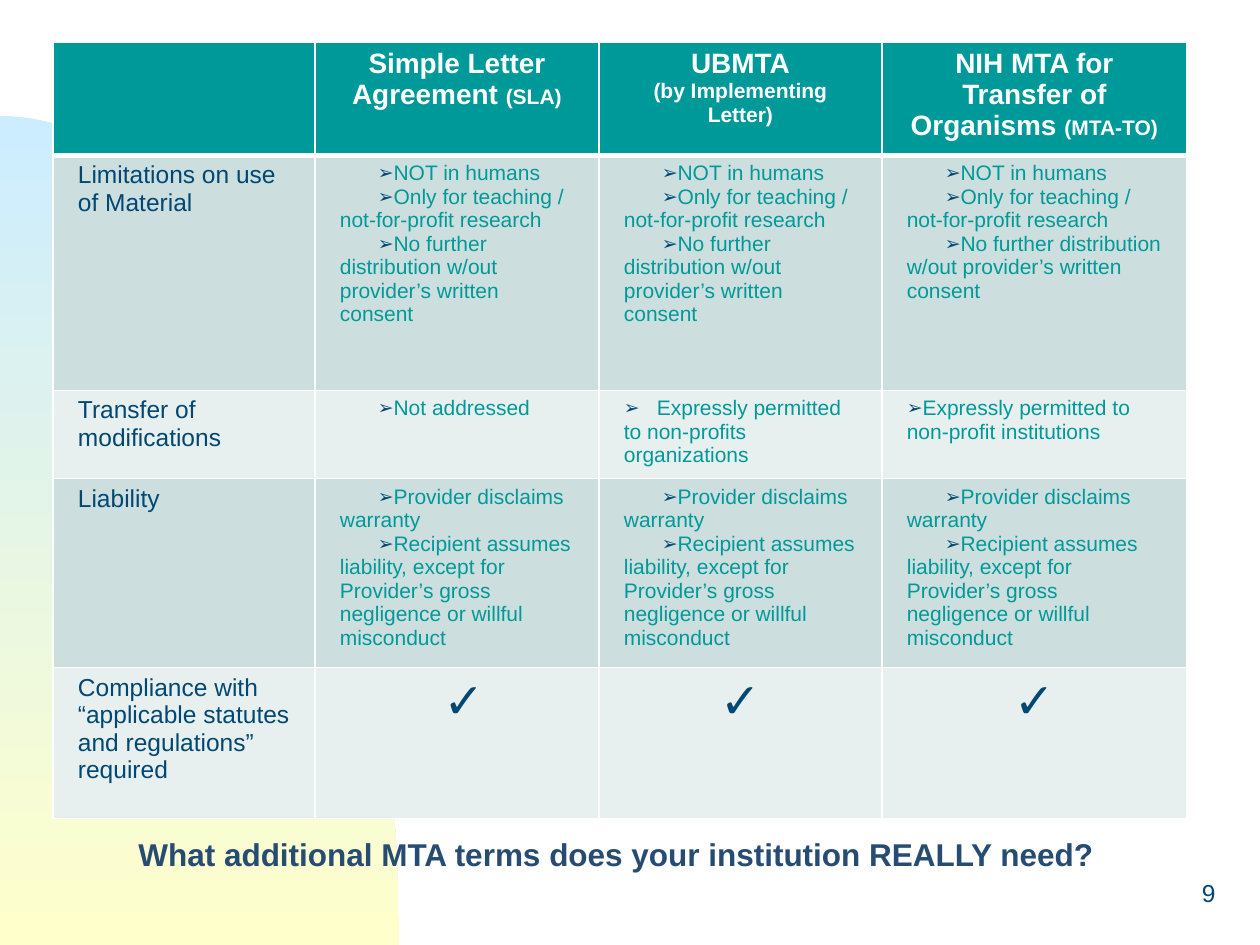
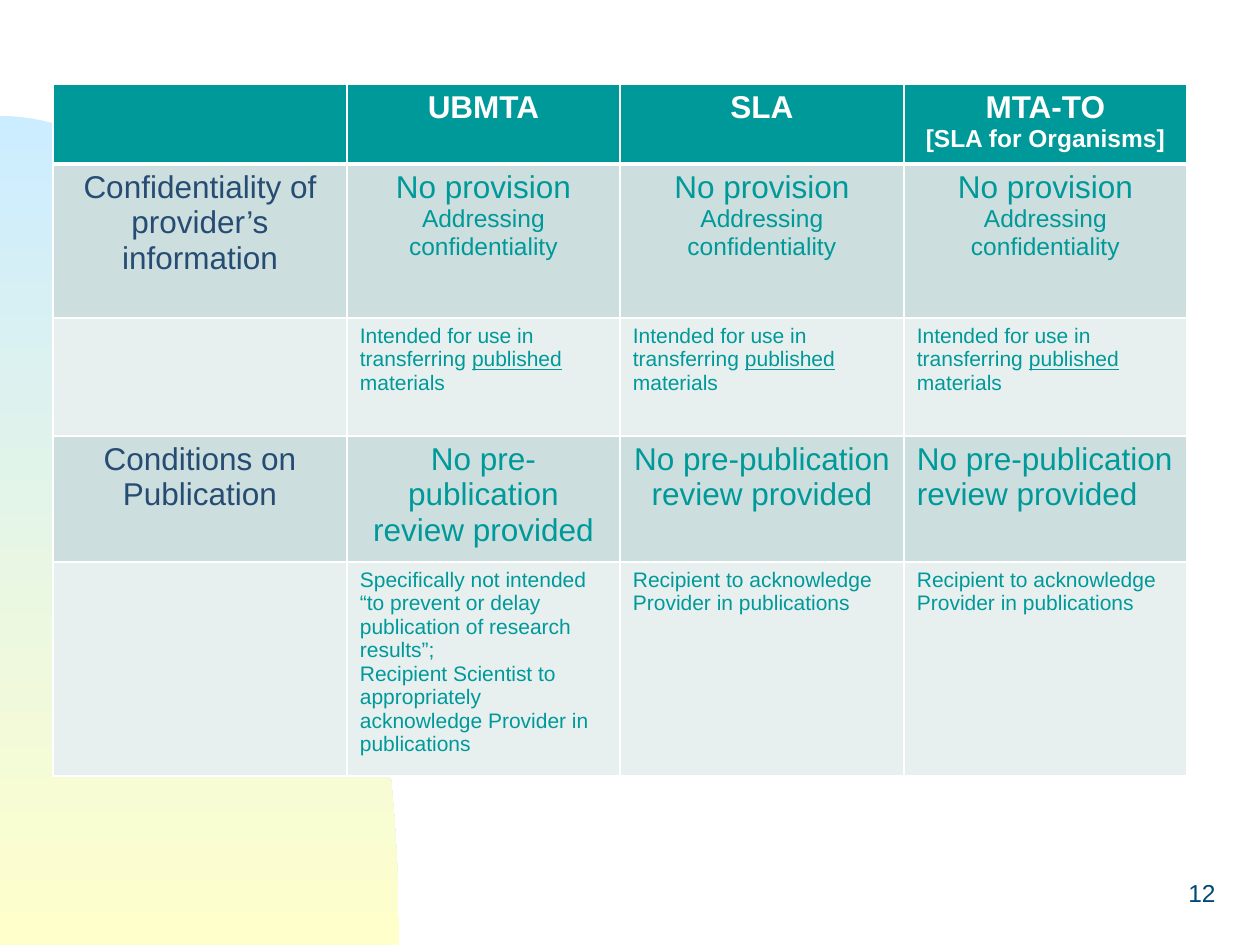
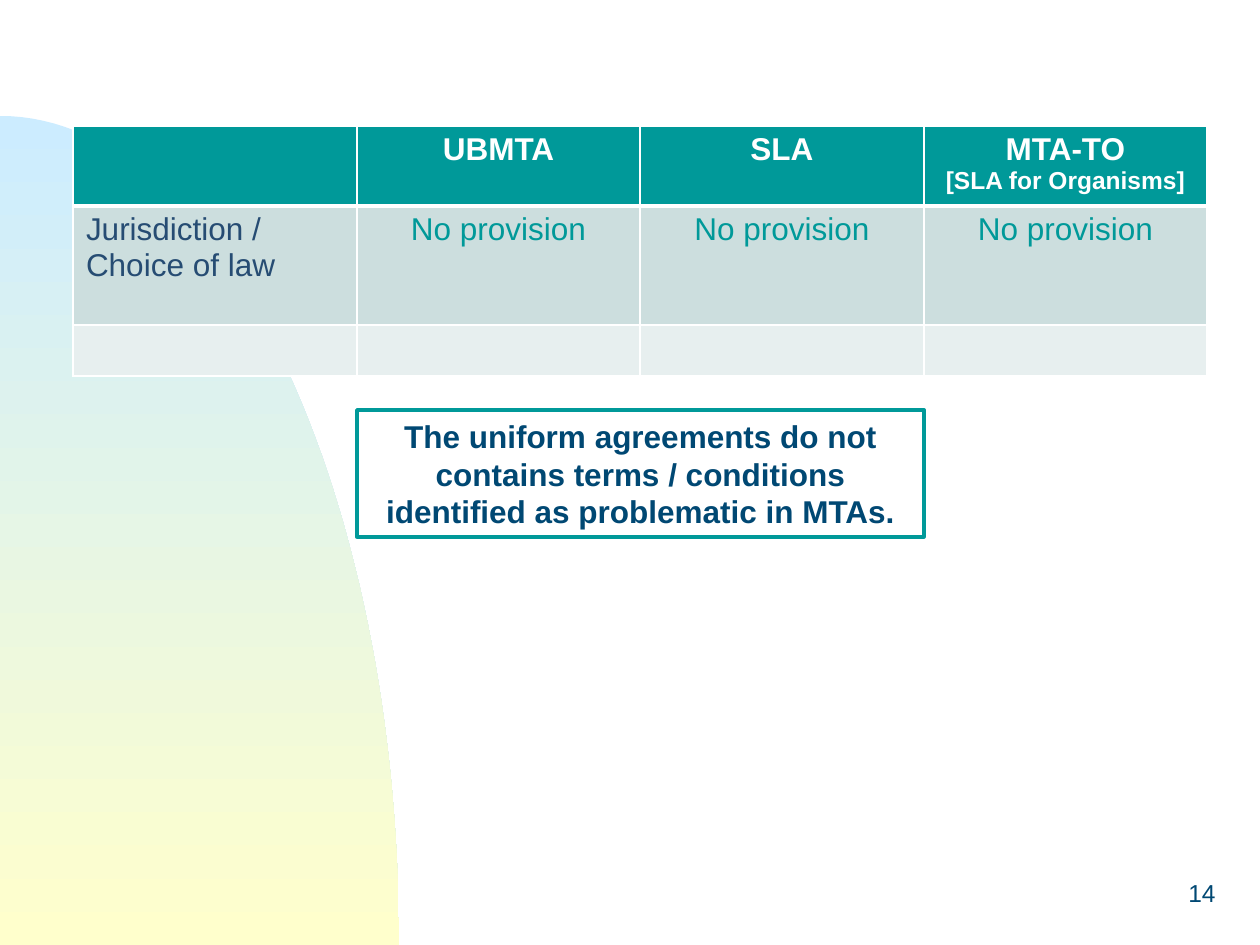
import dataclasses

import lxml.etree
import pptx
import pptx.dml.color
import pptx.enum.shapes
import pptx.enum.text
import pptx.oxml.ns
import pptx.util

PX = 914400 / 126
FONT = "Arial"
TEAL, NAVY, SLATE, WHITE = "009999", "004873", "264C73", "FFFFFF"
BAND_DARK, BAND_LIGHT = "CCDEDE", "E7EFEF"
SKY, CREAM = "CCECFF", "FFFFCC"
ALIGN = pptx.enum.text.PP_ALIGN
BULLET_INDENT = 38


def px(length):
    return pptx.util.Emu(round(length * PX))


def rgb(color):
    return pptx.dml.color.RGBColor.from_string(color)


def add_xml(parent, tag, **attributes):
    return lxml.etree.SubElement(parent, pptx.oxml.ns.qn(tag), attributes)


@dataclasses.dataclass
class Run:
    text: str
    size: int = 12
    color: str = TEAL
    bold: bool = False
    underline: bool = False


@dataclasses.dataclass
class Para:
    """A paragraph; an indent, even zero, gives it an arrow bullet."""
    runs: list
    align: object = ALIGN.LEFT
    indent: int | None = None
    tab: int | None = None


def line(text, size=12, color=TEAL, align=ALIGN.LEFT, bold=False):
    return Para([Run(text, size, color, bold)], align)


def centred(text, size=18, color=TEAL, bold=False):
    return line(text, size, color, ALIGN.CENTER, bold)


def heading(text, size=18):
    return centred(text, size, WHITE, True)


def bullets(*texts, indent=BULLET_INDENT):
    return [Para([Run(text)], indent=indent) for text in texts]


class Deck:
    def __init__(self):
        self.prs = pptx.Presentation()
        self.prs.slide_width, self.prs.slide_height = px(1260), px(945)
        self.layout = self.prs.slide_layouts[6]
        self.slide = None

    def new_slide(self, number):
        self.slide = self.prs.slides.add_slide(self.layout)
        if len(self.prs.slides) == 1:
            self.add_shared_curve()
        self.text_box(966, 861, 262, 63, line(str(number), 14, NAVY, ALIGN.RIGHT),
                      pptx.enum.text.MSO_ANCHOR.MIDDLE)

    def add_shared_curve(self):
        """Draw the gradient curve once and hand it to the layout."""
        top, right, bottom, steps = 116, 399, 945, 60
        points = []
        for step in range(1, steps + 1):
            t = step / steps
            u = 1 - t
            x = 3 * u * u * t * 220 + 3 * u * t * t * right + t ** 3 * right
            y = (u ** 3 + 3 * u * u * t) * top + 3 * u * t * t * 488 + t ** 3 * bottom
            points.append((round(x * PX), round(y * PX)))
        builder = self.slide.shapes.build_freeform(0, px(top))
        builder.add_line_segments(points + [(0, px(bottom))], close=True)
        curve = builder.convert_to_shape()
        curve.shadow.inherit = False
        curve.line.fill.background()
        curve.fill.gradient()
        curve.fill.gradient_angle = 270
        for stop, color, position in zip(curve.fill.gradient_stops, (SKY, CREAM), (0, 1)):
            stop.color.rgb = rgb(color)
            stop.position = position
        self.layout.shapes.element.insert(2, curve.element)

    def fill_text(self, frame, paras):
        frame.word_wrap = True
        for index, para in enumerate(paras):
            paragraph = frame.add_paragraph() if index else frame.paragraphs[0]
            paragraph.alignment = para.align
            if para.indent is not None:
                self.add_bullet(paragraph, para)
            for item in para.runs:
                run = paragraph.add_run()
                run.text = item.text
                run.font.name = FONT
                run.font.size = pptx.util.Pt(item.size)
                run.font.bold = item.bold
                run.font.underline = item.underline
                run.font.color.rgb = rgb(item.color)

    def add_bullet(self, paragraph, para):
        props = paragraph._p.get_or_add_pPr()
        props.set("marL", "0")
        props.set("indent", str(px(para.indent)))
        add_xml(add_xml(props, "a:buClr"), "a:srgbClr", val=NAVY)
        add_xml(props, "a:buSzPct", val="90000")
        add_xml(props, "a:buFont", typeface=FONT)
        add_xml(props, "a:buChar", char="➢")
        if para.tab:
            add_xml(add_xml(props, "a:tabLst"), "a:tab", pos=str(px(para.tab)), algn="l")

    def text_box(self, x, y, w, h, para, anchor=pptx.enum.text.MSO_ANCHOR.TOP):
        box = self.slide.shapes.add_textbox(px(x), px(y), px(w), px(h))
        box.text_frame.vertical_anchor = anchor
        self.fill_text(box.text_frame, [para])

    def callout(self, x, y, w, h, para):
        box = self.slide.shapes.add_shape(
            pptx.enum.shapes.MSO_SHAPE.RECTANGLE, px(x), px(y), px(w), px(h))
        box.shadow.inherit = False
        box.fill.solid()
        box.fill.fore_color.rgb = rgb(WHITE)
        box.line.color.rgb = rgb(TEAL)
        box.line.width = pptx.util.Pt(2)
        self.fill_text(box.text_frame, [para])

    def table(self, x, y, widths, heights, rows, side_margin=13):
        grid = self.slide.shapes.add_table(
            len(heights), len(widths), px(x), px(y), px(sum(widths)), px(sum(heights))).table
        for column, width in zip(grid.columns, widths):
            column.width = px(width)
        for r, (height, contents) in enumerate(zip(heights, rows)):
            grid.rows[r].height = px(height)
            fill = TEAL if r == 0 else BAND_DARK if r % 2 else BAND_LIGHT
            for c, paras in enumerate(contents):
                cell = grid.cell(r, c)
                cell.margin_left = cell.margin_right = px(side_margin)
                cell.fill.solid()
                cell.fill.fore_color.rgb = rgb(fill)
                self.borders(cell, top=3 if r == 1 else 1, bottom=3 if r == 0 else 1)
                self.fill_text(cell.text_frame, paras)

    def borders(self, cell, top, bottom):
        props = cell._tc.get_or_add_tcPr()
        sides = (("a:lnL", 1), ("a:lnR", 1), ("a:lnT", top), ("a:lnB", bottom))
        for index, (tag, points) in enumerate(sides):
            edge = add_xml(props, tag, w=str(pptx.util.Pt(points)))
            add_xml(add_xml(edge, "a:solidFill"), "a:srgbClr", val=WHITE)
            props.insert(index, edge)


def agreement_headings():
    return [[], [heading("UBMTA")], [heading("SLA")],
            [heading("MTA-TO"), heading("[SLA for Organisms]", 14)]]


def terms_slide(deck):
    def topic(text):
        return [line(text, 14, NAVY)]

    def titled(title, detail):
        return Para([Run(title + " ", 16, WHITE, True), Run(detail, 12, WHITE, True)],
                    ALIGN.CENTER)

    limitations = bullets("NOT in humans", "Only for teaching / not-for-profit research",
                          "No further distribution w/out provider’s written consent")
    liability = bullets(
        "Provider disclaims warranty",
        "Recipient assumes liability, except for Provider’s gross negligence or willful misconduct")
    nonprofits = Para([Run("\tExpressly permitted to non-profits organizations")],
                      indent=0, tab=33)
    rows = [
        [[], [titled("Simple Letter Agreement", "(SLA)")],
         [heading("UBMTA", 16), heading("(by Implementing Letter)", 12)],
         [titled("NIH MTA for Transfer of Organisms", "(MTA-TO)")]],
        [topic("Limitations on use of Material")] + [limitations] * 3,
        [topic("Transfer of modifications"), bullets("Not addressed"), [nonprofits],
         bullets("Expressly permitted to non-profit institutions", indent=0)],
        [topic("Liability")] + [liability] * 3,
        [topic("Compliance with “applicable statutes and regulations” required")]
        + [[centred(mark, 28, NAVY)] for mark in (" ✓", "✓", "✓")],
    ]
    deck.new_slide(9)
    deck.table(53, 42, (262, 284, 283, 305), (106, 235, 83, 177, 151), rows, side_margin=25)
    deck.text_box(126, 829, 1029, 89, line(
        "What additional MTA terms does your institution REALLY need?", 18, SLATE, bold=True))


def publication_slide(deck):
    no_provision = [centred("No provision"), centred("Addressing confidentiality", 14)]
    intended = [Para([Run("Intended for use in transferring "),
                      Run("published", underline=True), Run(" materials")])]
    no_review = "No pre-publication review provided"
    acknowledge = [line("Recipient to acknowledge Provider in publications")]
    rows = [
        agreement_headings(),
        [[centred("Confidentiality of provider’s information", color=SLATE)]]
        + [no_provision] * 3,
        [[]] + [intended] * 3,
        [[centred("Conditions on Publication", color=SLATE)],
         [centred(no_review)], [centred(no_review)], [line(no_review, 18)]],
        [[], [line("Specifically not intended “to prevent or delay publication of "
                   "research results”;"),
              line("Recipient Scientist to appropriately acknowledge Provider in publications")],
         acknowledge, acknowledge],
    ]
    deck.new_slide(12)
    deck.table(53, 84, (294, 273, 284, 283), (75, 154, 118, 119, 201), rows)


def jurisdiction_slide(deck):
    rows = [
        agreement_headings(),
        [[line("Jurisdiction / Choice of law", 18, SLATE)]] + [[centred("No provision")]] * 3,
        [[]] * 4,
    ]
    deck.new_slide(14)
    deck.table(73, 126, (284, 283, 284, 283), (75, 119, 51), rows)
    deck.callout(357, 410, 567, 127, centred(
        "The uniform agreements do not contains terms / conditions identified as "
        "problematic in MTAs.", color=NAVY, bold=True))


def main():
    deck = Deck()
    terms_slide(deck)
    publication_slide(deck)
    jurisdiction_slide(deck)
    deck.prs.save("out.pptx")


if __name__ == "__main__":
    main()
